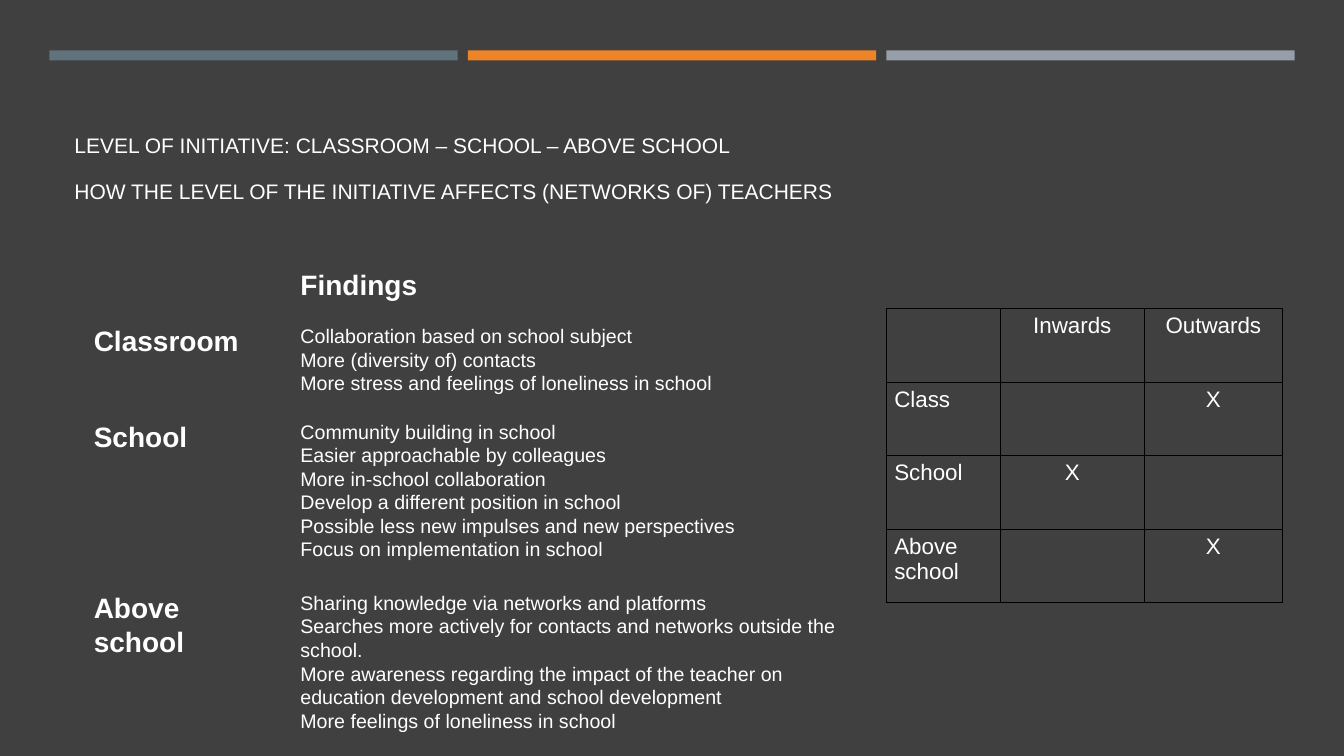
import pptx
import pptx.dml.color
import pptx.enum.shapes
import pptx.enum.text
import pptx.oxml
import pptx.oxml.ns
import pptx.util

Inches, Pt = pptx.util.Inches, pptx.util.Pt
ALIGN = pptx.enum.text.PP_ALIGN
NO_GRID = "{2D5ABB26-0587-4C30-8999-92F81FD0307C}"


def rgb(color):
    """Turn a hex string into a colour."""
    return pptx.dml.color.RGBColor.from_string(color)


class SlideBuilder:
    """Hold the style and the slide, and add elements to it."""

    font, color = "Arial", "FFFFFF"

    def __init__(self, prs):
        """Add a blank black slide."""
        self.s = prs.slides.add_slide(prs.slide_layouts[6])
        fill = self.s.background.fill
        fill.solid()
        fill.fore_color.rgb = rgb("000000")

    def rect(self, x, y, w, h, color):
        """Add a plain filled rectangle."""
        sp = self.s.shapes.add_shape(pptx.enum.shapes.MSO_SHAPE.RECTANGLE,
                                     Inches(x), Inches(y), Inches(w), Inches(h))
        sp.shadow.inherit = False
        sp.fill.solid()
        sp.fill.fore_color.rgb = rgb(color)
        sp.line.fill.background()

    def add_lines(self, tf, lines, font, para):
        """Add one paragraph per line with the given formats."""
        for i, line in enumerate(lines):
            p = tf.add_paragraph() if i else tf.paragraphs[0]
            for name, value in para.items():
                setattr(p, name, value)
            r = p.add_run()
            r.text = line
            for name, value in {"name": self.font, **font}.items():
                setattr(r.font, name, value)
            r.font.color.rgb = rgb(self.color)
        return p

    def title(self, x, y, w, h, lines):
        """Add the heading, anchored at the bottom."""
        tf = self.s.shapes.add_textbox(Inches(x), Inches(y), Inches(w), Inches(h)).text_frame
        tf.word_wrap = True
        tf.vertical_anchor = pptx.enum.text.MSO_ANCHOR.BOTTOM
        self.add_lines(tf, lines, {"size": Pt(15)},
                       {"line_spacing": 0.9, "space_before": Pt(16.5)})

    def table(self, x, y, cols, rows, texts, margins, style, border=None):
        """Add an unfilled table; style gives font and paragraph formats per cell."""
        t = self.s.shapes.add_table(len(rows), len(cols), Inches(x), Inches(y),
                                    Inches(sum(cols)), Inches(sum(rows))).table
        t._tbl.tblPr.find(pptx.oxml.ns.qn("a:tableStyleId")).text = NO_GRID
        t.first_row = t.horz_banding = False
        for col, width in zip(t.columns, cols):
            col.width = Inches(width)
        for row, height in zip(t.rows, rows):
            row.height = Inches(height)
        for i, row in enumerate(texts):
            for j, text in enumerate(row):
                cell = t.cell(i, j)
                for side, value in margins.items():
                    setattr(cell, "margin_" + side, Inches(value))
                if border:
                    self.border(cell, border)
                cell.fill.background()
                if text:
                    p = self.add_lines(cell.text_frame, text.split("\n"), *style(i, j))
                    p.space_after = Pt(8)

    def border(self, cell, color):
        """Draw a thin line on all four sides of a cell."""
        tcPr = cell._tc.get_or_add_tcPr()
        for side in "LRTB":
            tcPr.append(pptx.oxml.parse_xml(
                f'<a:ln{side} {pptx.oxml.ns.nsdecls("a")} w="{Pt(0.5)}"><a:solidFill>'
                f'<a:srgbClr val="{color}"/></a:solidFill></a:ln{side}>'))


def findings_style(i, j):
    """Make headings large and bold, findings regular."""
    heading = i == 0 or j == 0
    return {"size": Pt(20 if heading else 14), "bold": heading}, {"line_spacing": 1.07}


def direction_style(i, j):
    """Centre all but the first column."""
    return {"size": Pt(16)}, {"alignment": ALIGN.CENTER if j else ALIGN.LEFT}


FINDINGS = [
    ("", "Findings"),
    ("Classroom", """Collaboration based on school subject
More (diversity of) contacts
More stress and feelings of loneliness in school"""),
    ("School", """Community building in school
Easier approachable by colleagues
More in-school collaboration
Develop a different position in school
Possible less new impulses and new perspectives
Focus on implementation in school"""),
    ("Above school", """Sharing knowledge via networks and platforms
Searches more actively for contacts and networks outside the school.
More awareness regarding the impact of the teacher on education development and school development
More feelings of loneliness in school"""),
]
DIRECTIONS = [("", "Inwards", "Outwards"), ("Class", "", "X"),
              ("School", "X", ""), ("Above school", "", "X")]


def main():
    """Build and save the slide."""
    prs = pptx.Presentation()
    prs.slide_width, prs.slide_height = Inches(13.33), Inches(7.5)
    b = SlideBuilder(prs)
    b.rect(0, 0, 13.33, 7.5, "404040")
    b.title(0.64, 0.77, 12.06, 1.3, [
        "LEVEL OF INITIATIVE: CLASSROOM – SCHOOL – ABOVE SCHOOL",
        "HOW THE LEVEL OF THE INITIATIVE AFFECTS (NETWORKS OF) TEACHERS"])
    for i, color in enumerate(["60727A", "ED8428", "969FA7"]):
        b.rect(0.49 + 4.15 * i, 0.5, 4.05, 0.1, color)
    b.table(0.74, 2.56, [2.05, 5.89], [0.44, 0.88, 1.54, 1.32], FINDINGS,
            {"left": 0.19, "top": 0.1, "right": 0.14, "bottom": 0.1}, findings_style)
    b.table(8.79, 3.06, [1.13, 1.43, 1.37], [0.73] * 4, DIRECTIONS,
            {"left": 0.08, "top": 0.05, "right": 0.08, "bottom": 0.05},
            direction_style, "000000")
    prs.save("out.pptx")


if __name__ == "__main__":
    main()
